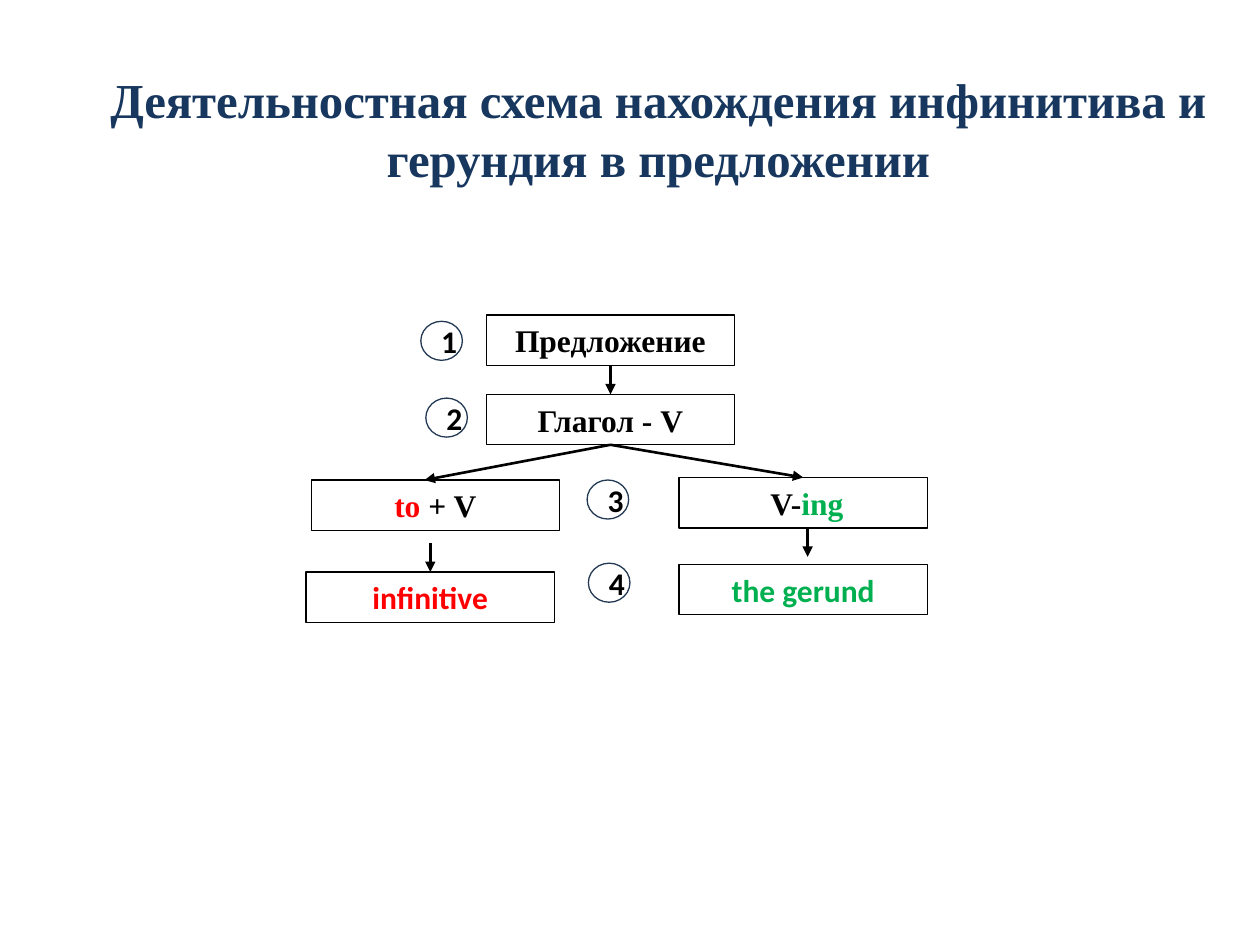
from dataclasses import dataclass
from typing import NamedTuple

from lxml.etree import SubElement
from pptx import Presentation
from pptx.dml.color import RGBColor
from pptx.enum.shapes import MSO_CONNECTOR, MSO_SHAPE
from pptx.enum.text import MSO_ANCHOR, MSO_AUTO_SIZE, PP_ALIGN
from pptx.oxml.ns import qn
from pptx.util import Inches, Pt


@dataclass(frozen=True)
class Theme:
    navy: str = "17375E"
    ring: str = "233953"
    black: str = "000000"
    white: str = "FFFFFF"
    red: str = "FF0000"
    green: str = "00B050"
    serif: str = "Times New Roman"
    sans: str = "Calibri"
    title_size: float = 27.9
    body_size: float = 18
    thin: float = 0.75
    thick: float = 1.5


class Run(NamedTuple):
    text: str
    color: str
    font: str
    size: float = Theme.body_size


class Node(NamedTuple):
    col: float
    row: float
    runs: tuple[Run, ...]


class Arrow(NamedTuple):
    """A joined end is (node, side); a free end is (col, row)."""
    begin: tuple
    end: tuple


T = Theme()
COLS, ROWS = 100, 75
CELL = Inches(10) // COLS
NODE_W, NODE_H = 19.7, 4
BADGE_W, BADGE_H = 3.3, 3.1
DIGIT_W, DIGIT_H = 1.9, 4
TOP, BOTTOM = 0, 2

TITLE = Run("Деятельностная схема нахождения инфинитива и герундия в предложении",
            T.navy, T.serif, T.title_size)
NODES = {
    "sentence": Node(38.6, 25, (Run("Предложение", T.black, T.serif),)),
    "verb": Node(38.6, 31.3, (Run("Глагол - V", T.black, T.serif),)),
    "to_v": Node(24.7, 38.1, (Run("to", T.red, T.serif), Run(" + V", T.black, T.serif))),
    "v_ing": Node(53.9, 37.9, (Run(" V-", T.black, T.serif), Run("ing", T.green, T.serif))),
    "infinitive": Node(24.3, 45.4, (Run("infinitive", T.red, T.sans),)),
    "gerund": Node(53.9, 44.8, (Run("the gerund", T.green, T.sans),)),
}
ARROWS = (
    Arrow(("sentence", BOTTOM), ("verb", TOP)),
    Arrow(("verb", BOTTOM), (33.7, 38.1)),
    Arrow(("verb", BOTTOM), ("v_ing", TOP)),
    Arrow((34.15, 43.1), ("infinitive", TOP)),
    Arrow((64.1, 42), (64.1, 44.2)),
)
BADGES = ((33.4, 25.5), (33.8, 31.6), (46.6, 38.1), (46.7, 44.7))


def grid(*cells: float) -> list[int]:
    """Turn columns and rows into lengths."""
    return [round(c * CELL) for c in cells]


def set_text(sp, runs: tuple[Run, ...], **frame) -> None:
    tf = sp.text_frame
    for name, value in {"word_wrap": True, **frame}.items():
        setattr(tf, name, value)
    p = tf.paragraphs[0]
    p.alignment = PP_ALIGN.CENTER
    for run in runs:
        r = p.add_run()
        r.text = run.text
        for name, value in {"name": run.font, "size": Pt(run.size), "bold": True}.items():
            setattr(r.font, name, value)
        r.font.color.rgb = RGBColor.from_string(run.color)


def add_outlined(shapes, kind: MSO_SHAPE, box: list[int], line: str, fill: str = ""):
    sp = shapes.add_shape(kind, *box)
    sp.shadow.inherit = False
    if fill:
        sp.fill.solid()
        sp.fill.fore_color.rgb = RGBColor.from_string(fill)
    else:
        sp.fill.background()
    sp.line.color.rgb = RGBColor.from_string(line)
    sp.line.width = Pt(T.thin)
    return sp


def add_node(shapes, node: Node):
    box = grid(node.col, node.row, NODE_W, NODE_H)
    sp = add_outlined(shapes, MSO_SHAPE.RECTANGLE, box, T.black)
    set_text(sp, node.runs, vertical_anchor=MSO_ANCHOR.TOP,
             auto_size=MSO_AUTO_SIZE.SHAPE_TO_FIT_TEXT)
    return sp


def add_badge(shapes, number: int, col: float, row: float) -> None:
    group = shapes.add_group_shape().shapes
    add_outlined(group, MSO_SHAPE.OVAL, grid(col, row, BADGE_W, BADGE_H), T.ring, T.white)
    digit = group.add_textbox(*grid(col + (BADGE_W - DIGIT_W) / 2,
                                    row + (BADGE_H - DIGIT_H) / 2, DIGIT_W, DIGIT_H))
    set_text(digit, (Run(str(number), T.black, T.sans),),
             auto_size=MSO_AUTO_SIZE.SHAPE_TO_FIT_TEXT)


def add_arrow(shapes, arrow: Arrow, boxes: dict) -> None:
    ends = [(0, 0) if end[0] in boxes else end for end in arrow]
    cx = shapes.add_connector(MSO_CONNECTOR.STRAIGHT, *grid(*ends[0], *ends[1]))
    for end, join in zip(arrow, (cx.begin_connect, cx.end_connect)):
        if end[0] in boxes:
            join(boxes[end[0]], end[1])
    cx.line.color.rgb = RGBColor.from_string(T.black)
    cx.line.width = Pt(T.thick)
    SubElement(cx.line._get_or_add_ln(), qn("a:tailEnd"), type="triangle")
    SubElement(cx._element.spPr, qn("a:effectLst"))


def main() -> None:
    prs = Presentation()
    prs.slide_width, prs.slide_height = grid(COLS, ROWS)
    shapes = prs.slides.add_slide(prs.slide_layouts[6]).shapes

    title = shapes.add_textbox(*grid(7.5, 5.2, 89.5, 16.1))
    set_text(title, (TITLE,), vertical_anchor=MSO_ANCHOR.MIDDLE,
             margin_bottom=grid(6.6)[0])
    boxes = {name: add_node(shapes, node) for name, node in NODES.items()}
    for arrow in ARROWS:
        add_arrow(shapes, arrow, boxes)
    for number, (col, row) in enumerate(BADGES, start=1):
        add_badge(shapes, number, col, row)

    prs.save("out.pptx")


if __name__ == "__main__":
    main()
